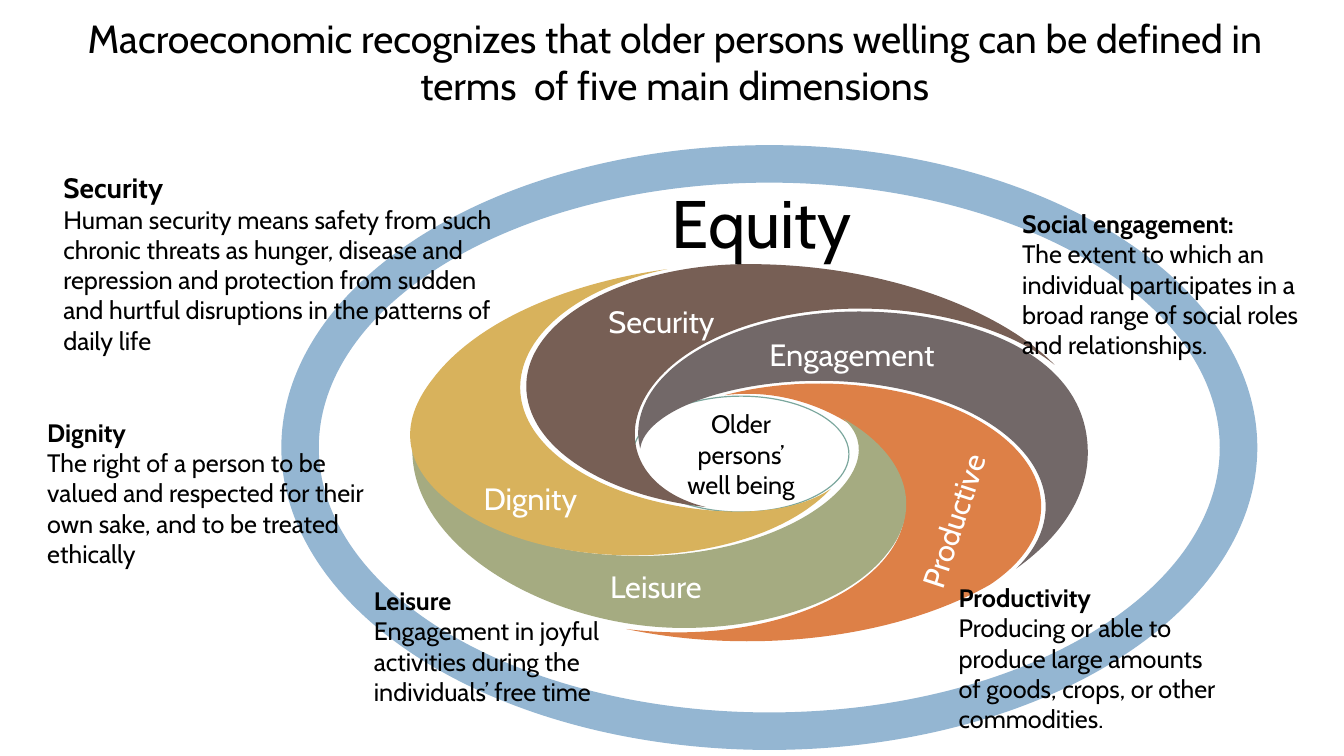
from lxml import etree
from pptx import Presentation
from pptx.dml.color import RGBColor
from pptx.enum import shapes, text
from pptx.oxml import ns
from pptx.util import Inches, Pt

FONT = "Cabin"
COLORS = {
    "black": "000000", "white": "FFFFFF", "ring": "94B6D2", "center line": "7BA79D",
    "productive": "DD8047", "leisure": "A5AB81", "dignity": "D8B25C",
    "security": "775F55", "engagement": "726868",
}

deck = Presentation()
deck.slide_width, deck.slide_height = Inches(13.33), Inches(7.5)
page = deck.slides.add_slide(deck.slide_layouts[6])


def paint(shape, color):
    shape.shadow.inherit = False
    shape.fill.solid()
    shape.fill.fore_color.rgb = RGBColor.from_string(COLORS[color])
    shape.line.fill.background()


def add_text(place, lines, color="black", align=None):
    """Add a text box; each line is (wording, size, bold)."""
    box = page.shapes.add_textbox(*map(Inches, place))
    frame = box.text_frame
    frame.word_wrap = True
    frame.auto_size = text.MSO_AUTO_SIZE.SHAPE_TO_FIT_TEXT
    for index, (wording, size, bold) in enumerate(lines):
        para = frame.add_paragraph() if index else frame.paragraphs[0]
        para.text = wording
        para.alignment = align
        para.font.name, para.font.size, para.font.bold = FONT, Pt(size), bold
        para.font.color.rgb = RGBColor.from_string(COLORS[color])
    return box


# Center circle
center = page.shapes.add_shape(shapes.MSO_SHAPE.FLOWCHART_CONNECTOR,
                               Inches(6.28), Inches(3.93), Inches(2.14), Inches(1.15))
paint(center, "white")
center.line.color.rgb = RGBColor.from_string(COLORS["center line"])
center.line.width = Pt(0.85)
frame = center.text_frame
frame.word_wrap = True
frame.vertical_anchor = text.MSO_ANCHOR.MIDDLE
frame.margin_top = frame.margin_bottom = 0
para = frame.paragraphs[0]
para.text = "Older persons’ well being"
para.alignment = text.PP_ALIGN.CENTER
para.font.name, para.font.size = FONT, Pt(18)
para.font.color.rgb = RGBColor.from_string(COLORS["black"])

# Swirl blades: frame, then a start point and three points per Bézier curve
blades = {
    "productive": ((6.21, 3.81, 4.11, 2.55), [
        (9.57, 4.1), (8.89, 3.78), (7.95, 3.72), (7.19, 3.92),
        (8.01, 3.82), (8.74, 4.3), (8.92, 4.75), (9.29, 5.64), (7.84, 6.45), (6.21, 6.24),
        (7.45, 6.5), (8.87, 6.34), (9.82, 5.8), (10.57, 5.3), (10.49, 4.55), (9.57, 4.1)]),
    "leisure": ((4.09, 4.15, 4.9, 2.07), [
        (8.8, 5.49), (9.16, 5.05), (9, 4.51), (8.36, 4.15),
        (8.95, 4.65), (7.82, 5.6), (6.13, 5.51), (5.04, 5.46), (4.17, 4.97), (4.09, 4.36),
        (4.09, 4.4), (4.09, 4.44), (4.09, 4.47), (4.09, 5.45), (5.47, 6.23), (6.78, 6.23),
        (7.67, 6.23), (8.45, 5.94), (8.8, 5.49)]),
    "dignity": ((4.07, 2.67, 4.17, 2.84), [
        (8.24, 4.85), (7.69, 5.23), (6.55, 5.08), (5.92, 4.77),
        (4.63, 4.14), (5.06, 2.99), (6.62, 2.67), (5.6, 2.81), (4.72, 3.2), (4.3, 3.75),
        (3.94, 4.2), (3.99, 4.64), (4.51, 5.02), (5.49, 5.74), (7.49, 5.65), (8.24, 4.85)]),
    "security": ((5.22, 2.62, 5.23, 2.41), [
        (7.42, 2.62), (6.22, 2.62), (5.22, 3.16), (5.22, 3.83),
        (5.22, 4.43), (5.99, 4.92), (7, 5.03), (5.98, 4.78), (6.02, 3.67), (7.44, 3.22),
        (8.49, 2.89), (9.82, 3.1), (10.46, 3.62), (10.03, 3.17), (8.93, 2.62), (7.42, 2.62)]),
    "engagement": ((6.33, 3.09, 4.46, 2.55), [
        (8.52, 3.09), (7.32, 3.09), (6.33, 3.63), (6.33, 4.3),
        (6.33, 4.35), (6.34, 4.4), (6.35, 4.45), (6.43, 3.88), (8.31, 3.47), (9.6, 4.08),
        (10.4, 4.47), (10.61, 5.12), (10.08, 5.64), (10.54, 5.31), (10.79, 4.91), (10.79, 4.49),
        (10.79, 3.46), (9.51, 3.09), (8.52, 3.09)]),
}
for name, ((left, top, width, height), points) in blades.items():
    builder = page.shapes.build_freeform(Inches(left), Inches(top))
    builder.add_line_segments([(Inches(left + width), Inches(top + height))])
    blade = builder.convert_to_shape()
    paint(blade, name)
    # Swap the frame's diagonal for the curved outline
    outline = next(blade._element.iter(ns.qn("a:path")))
    for command in list(outline):
        outline.remove(command)
    for index, (x, y) in enumerate(points):
        if index % 3 == 1 or index == 0:
            tag = "a:cubicBezTo" if index else "a:moveTo"
            command = etree.SubElement(outline, ns.qn(tag))
        etree.SubElement(command, ns.qn("a:pt"),
                         x=str(Inches(x - left)), y=str(Inches(y - top)))
    etree.SubElement(outline, ns.qn("a:close"))

# Blade labels
labels = [
    ("Security", (5.82, 2.95, 1.48, 0.32), 0),
    ("Engagement", (7.26, 3.28, 2.38, 0.32), 0),
    ("Leisure", (5.36, 5.58, 2.29, 0.32), 0),
    ("Productive", (8.53, 4.95, 1.8, 0.42), 288.2),
    ("Dignity", (4.07, 4.71, 2.38, 0.39), 0),
]
for wording, place, angle in labels:
    label = add_text(place, [(wording, 22, False)], "white", text.PP_ALIGN.CENTER)
    label.rotation = angle

# Equity ring
add_text((5.86, 1.75, 3.39, 0.75), [("Equity", 48, False)], align=text.PP_ALIGN.CENTER)
ring = page.shapes.add_shape(shapes.MSO_SHAPE.DONUT,
                             Inches(2.79), Inches(1.44), Inches(9.68), Inches(6))
ring.adjustments[0] = 0.062
paint(ring, "ring")

# Definitions of the dimensions
definitions = [
    ("Security", 20, (0.53, 1.64, 4.53, 1.62),
     "Human security means safety from such chronic threats as hunger, disease and repression "
     "and protection from sudden and hurtful disruptions in the patterns of daily life"),
    ("Social engagement:", 18, (10.04, 2.02, 2.95, 1.34),
     "The extent to which an individual participates in a broad range of social roles "
     "and relationships."),
    ("Productivity", 18, (9.41, 5.73, 2.89, 1.34),
     "Producing or able to produce large amounts of goods, crops, or other commodities."),
    ("Leisure", 18, (3.61, 5.76, 2.75, 1.09),
     "Engagement in joyful activities during the individuals’ free time"),
    ("Dignity", 18, (0.37, 4.09, 3.55, 1.34),
     "The right of a person to be valued and respected for their own sake, "
     "and to be treated ethically"),
]
for heading, size, place, meaning in definitions:
    add_text(place, [(heading, size, True), (meaning, 18, False)])

# Title
add_text((0.37, 0.09, 12.64, 1.04),
         [("Macroeconomic recognizes that older persons welling can be defined in "
           "terms  of five main dimensions", 28, False)], align=text.PP_ALIGN.CENTER)

deck.save("out.pptx")
